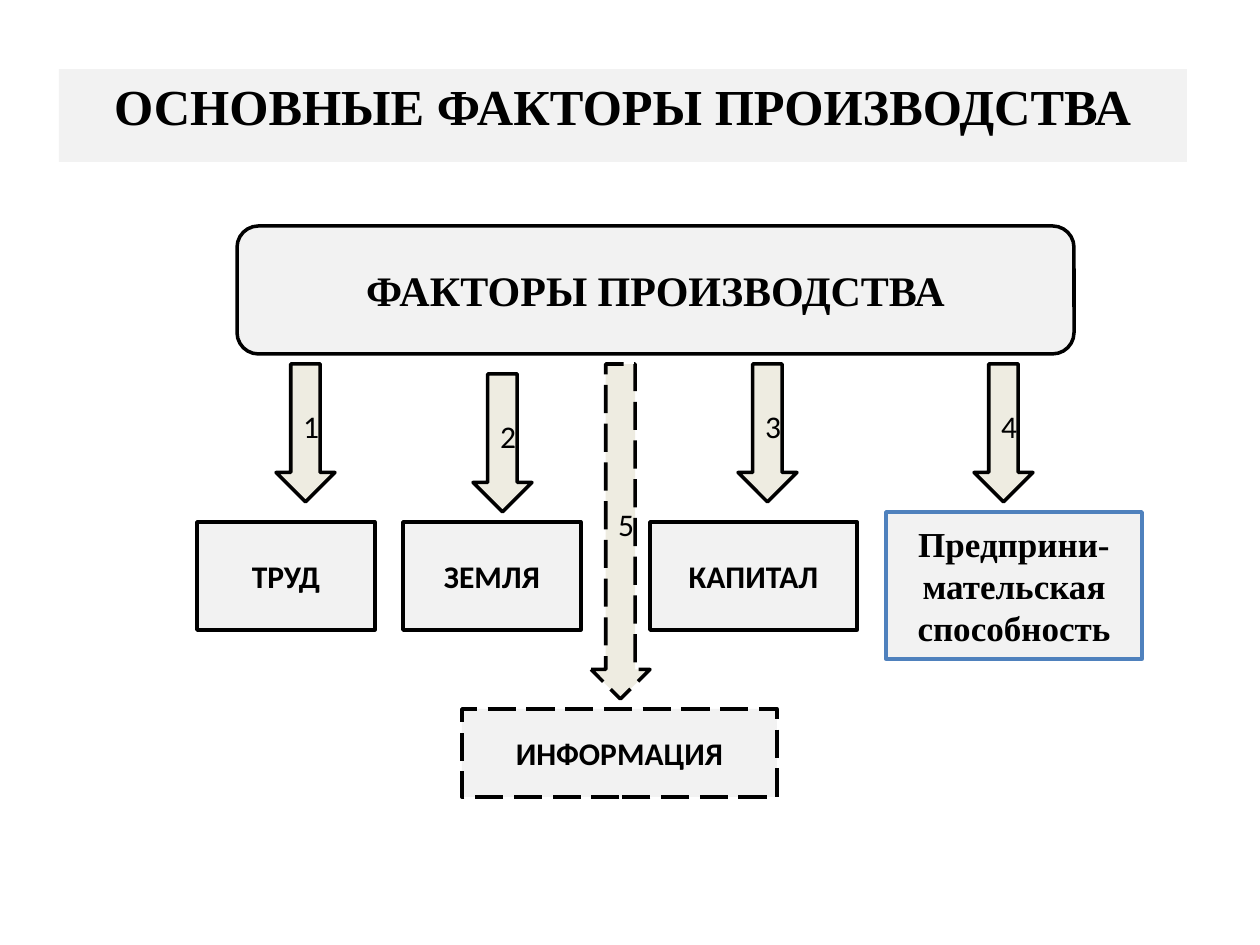
from dataclasses import dataclass

from pptx import Presentation
from pptx.dml.color import RGBColor
from pptx.enum.dml import MSO_LINE
from pptx.enum.shapes import MSO_SHAPE
from pptx.enum.text import MSO_ANCHOR, MSO_AUTO_SIZE, PP_ALIGN
from pptx.util import Emu, Inches, Pt

SERIF = "Times New Roman"
SANS = "Calibri"
BLACK = "000000"
GREY = "F2F2F2"
CREAM = "EEECE1"
BLUE = "4F81BD"


@dataclass
class Box:
    text: str
    left: int
    top: int
    width: int
    height: int
    kind: MSO_SHAPE = MSO_SHAPE.RECTANGLE
    font: str = SANS
    size: float = 18
    bold: bool = True
    fill: str = GREY
    line: str = BLACK
    dash: bool = False


def px(count: int) -> Emu:
    return Emu(round(count * Inches(1) / 126))


def tint(code: str) -> RGBColor:
    return RGBColor.from_string(code)


def paint(shape, code: str) -> None:
    shape.fill.solid()
    shape.fill.fore_color.rgb = tint(code)


def write(shape, text: str, *, font: str = SANS, size: float = 18,
          bold: bool = True, anchor: MSO_ANCHOR = MSO_ANCHOR.MIDDLE) -> None:
    frame = shape.text_frame
    frame.word_wrap = True
    frame.auto_size = MSO_AUTO_SIZE.NONE
    frame.vertical_anchor = anchor
    para = frame.paragraphs[0]
    para.alignment = PP_ALIGN.CENTER
    run = para.add_run()
    run.text = text
    run.font.name = font
    run.font.size = Pt(size)
    run.font.bold = bold
    run.font.color.rgb = tint(BLACK)


def draw(slide, box: Box) -> None:
    shape = slide.shapes.add_shape(
        box.kind, px(box.left), px(box.top), px(box.width), px(box.height))
    shape.shadow.inherit = False
    paint(shape, box.fill)
    shape.line.color.rgb = tint(box.line)
    shape.line.width = Pt(2)
    if box.dash:
        shape.line.dash_style = MSO_LINE.LONG_DASH
    write(shape, box.text, font=box.font, size=box.size, bold=box.bold)


def arrow(text: str, left: int, top: int = 364, height: int = 138,
          dash: bool = False) -> Box:
    return Box(text, left, top, 59, height, MSO_SHAPE.DOWN_ARROW,
               bold=False, fill=CREAM, dash=dash)


def head(slide, text: str) -> None:
    title = slide.shapes.title
    title.left, title.top = px(59), px(69)
    title.width, title.height = px(1128), px(93)
    paint(title, GREY)
    write(title, text, font=SERIF, size=28.8, anchor=MSO_ANCHOR.TOP)


BOXES = [
    Box("ФАКТОРЫ ПРОИЗВОДСТВА", 237, 226, 837, 128,
        MSO_SHAPE.ROUNDED_RECTANGLE, SERIF, 24),
    arrow("1", 276),
    arrow("2", 473, top=374),
    arrow("3", 738),
    arrow("4", 974),
    arrow("5", 591, height=335, dash=True),
    Box("ТРУД", 197, 522, 178, 108),
    Box("ЗЕМЛЯ", 403, 522, 178, 108),
    Box("КАПИТАЛ", 650, 522, 207, 108),
    Box("Предприни-мательская способность", 886, 512, 256, 147,
        font=SERIF, size=20, line=BLUE),
    Box("ИНФОРМАЦИЯ", 462, 709, 315, 88, dash=True),
]


def main() -> None:
    """Build the slide on the factors of production."""
    deck = Presentation()
    deck.slide_width, deck.slide_height = px(1260), px(945)
    slide = deck.slides.add_slide(deck.slide_layouts.get_by_name("Title Only"))
    head(slide, "ОСНОВНЫЕ ФАКТОРЫ ПРОИЗВОДСТВА")
    for box in BOXES:
        draw(slide, box)
    deck.save("out.pptx")


if __name__ == "__main__":
    main()
